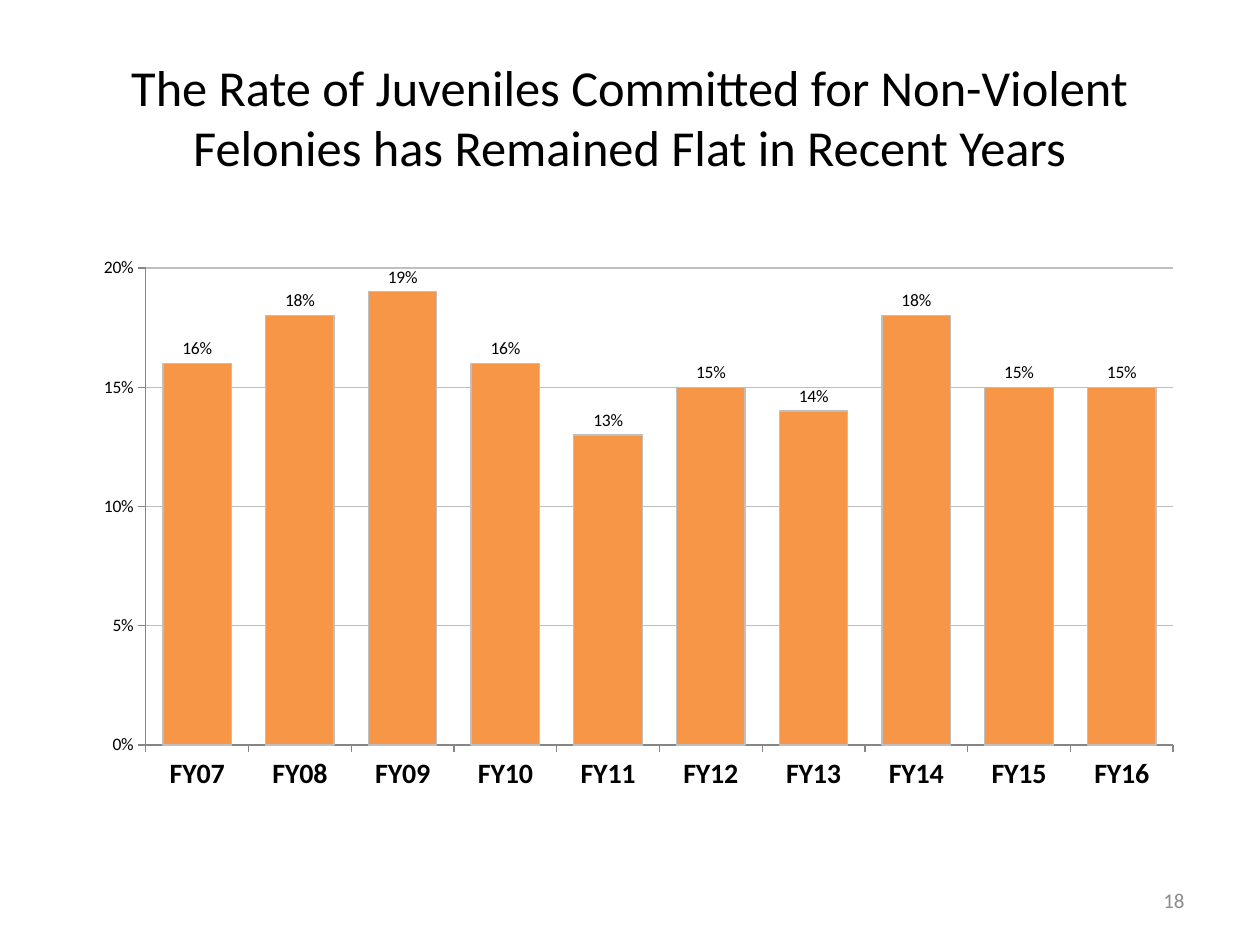
from dataclasses import dataclass

from lxml.etree import SubElement
from pptx import Presentation
from pptx.chart.data import CategoryChartData
from pptx.dml.color import RGBColor
from pptx.enum.chart import XL_CHART_TYPE as ChartType
from pptx.enum.chart import XL_LABEL_POSITION as LabelPosition
from pptx.enum.chart import XL_TICK_MARK as TickMark
from pptx.enum.text import MSO_ANCHOR as Anchor
from pptx.enum.text import PP_ALIGN as Align
from pptx.oxml.ns import qn
from pptx.util import Cm, Pt


@dataclass(frozen=True)
class Theme:
    font: str = "Calibri"
    ink: RGBColor = RGBColor(0x00, 0x00, 0x00)
    muted: RGBColor = RGBColor(0x8C, 0x8C, 0x8C)
    bar: RGBColor = RGBColor(0xF7, 0x96, 0x46)
    grid: RGBColor = RGBColor(0xBF, 0xBF, 0xBF)
    axis: RGBColor = RGBColor(0x86, 0x86, 0x86)
    title_size: Pt = Pt(28.8)
    year_size: Pt = Pt(16)
    number_size: Pt = Pt(12)
    label_size: Pt = Pt(10)
    hairline: Pt = Pt(0.75)


THEME = Theme()
YEARS = [f"FY{year:02d}" for year in range(7, 17)]
RATES = [0.16, 0.18, 0.19, 0.16, 0.13, 0.15, 0.14, 0.18, 0.15, 0.15]


def style_font(font, size, color):
    font.name = THEME.font
    font.size = size
    font.color.rgb = color


def style_line(line, color):
    line.color.rgb = color
    line.width = THEME.hairline


def add_text(slide, text, box, size, color, align):
    frame = slide.shapes.add_textbox(*box).text_frame
    frame.word_wrap = True
    frame.vertical_anchor = Anchor.MIDDLE
    frame.text = text
    paragraph = frame.paragraphs[0]
    paragraph.alignment = align
    style_font(paragraph.runs[0].font, size, color)


def place_plot(chart, **fractions):
    """Fix the inner plot area as fractions (x, y, w, h) of the chart."""
    plot_area = chart._chartSpace.chart.plotArea
    for old in plot_area.findall(qn("c:layout")):
        plot_area.remove(old)
    layout = SubElement(plot_area, qn("c:layout"))
    plot_area.insert(0, layout)
    manual = SubElement(layout, qn("c:manualLayout"))
    settings = {"layoutTarget": "inner", "xMode": "edge", "yMode": "edge", **fractions}
    for tag, value in settings.items():
        SubElement(manual, qn(f"c:{tag}")).set("val", str(value))


def style_axes(chart):
    years, rates = chart.category_axis, chart.value_axis
    for axis in (years, rates):
        axis.major_tick_mark = TickMark.OUTSIDE
        axis.minor_tick_mark = TickMark.NONE
        style_line(axis.format.line, THEME.axis)
    years.has_major_gridlines = False
    style_font(years.tick_labels.font, THEME.year_size, THEME.ink)
    years.tick_labels.font.bold = True

    rates.minimum_scale, rates.maximum_scale, rates.major_unit = 0, 0.2, 0.05
    rates.has_major_gridlines = True
    style_line(rates.major_gridlines.format.line, THEME.grid)
    rates.tick_labels.number_format = "0%"
    rates.tick_labels.number_format_is_linked = False
    style_font(rates.tick_labels.font, THEME.label_size, THEME.ink)


def style_bars(plot):
    plot.gap_width = 50
    plot.vary_by_categories = False
    bars = plot.series[0]
    bars.format.fill.solid()
    bars.format.fill.fore_color.rgb = THEME.bar
    style_line(bars.format.line, THEME.grid)
    labels = bars.data_labels
    labels.show_value = True
    labels.number_format = "0%"
    labels.number_format_is_linked = False
    labels.position = LabelPosition.OUTSIDE_END
    style_font(labels.font, THEME.label_size, THEME.ink)


def add_rate_chart(slide, box):
    data = CategoryChartData(number_format="0%")
    data.categories = YEARS
    data.add_series("Series 1", RATES)
    chart = slide.shapes.add_chart(ChartType.COLUMN_CLUSTERED, *box, data).chart
    chart.has_title = False
    chart.has_legend = False
    style_font(chart.font, THEME.label_size, THEME.ink)
    place_plot(chart, x=0.073, y=0.076, w=0.906, h=0.765)
    style_axes(chart)
    style_bars(chart.plots[0])


def main():
    deck = Presentation()
    deck.slide_width, deck.slide_height = Cm(25.4), Cm(19.05)
    slide = deck.slides.add_slide(deck.slide_layouts[6])
    margin, content_width = Cm(1.27), Cm(22.86)

    # Title
    add_text(
        slide,
        "The Rate of Juveniles Committed for Non-Violent Felonies "
        "has Remained Flat in Recent Years",
        (margin, Cm(0.76), content_width, Cm(3.18)),
        THEME.title_size, THEME.ink, Align.CENTER,
    )

    # Commitment rate by fiscal year
    add_rate_chart(slide, (margin, Cm(4.45), content_width, Cm(12.57)))

    # Slide number
    add_text(
        slide, "18", (Cm(18.2), Cm(17.65), Cm(5.93), Cm(1.01)),
        THEME.number_size, THEME.muted, Align.RIGHT,
    )

    deck.save("out.pptx")


if __name__ == "__main__":
    main()
